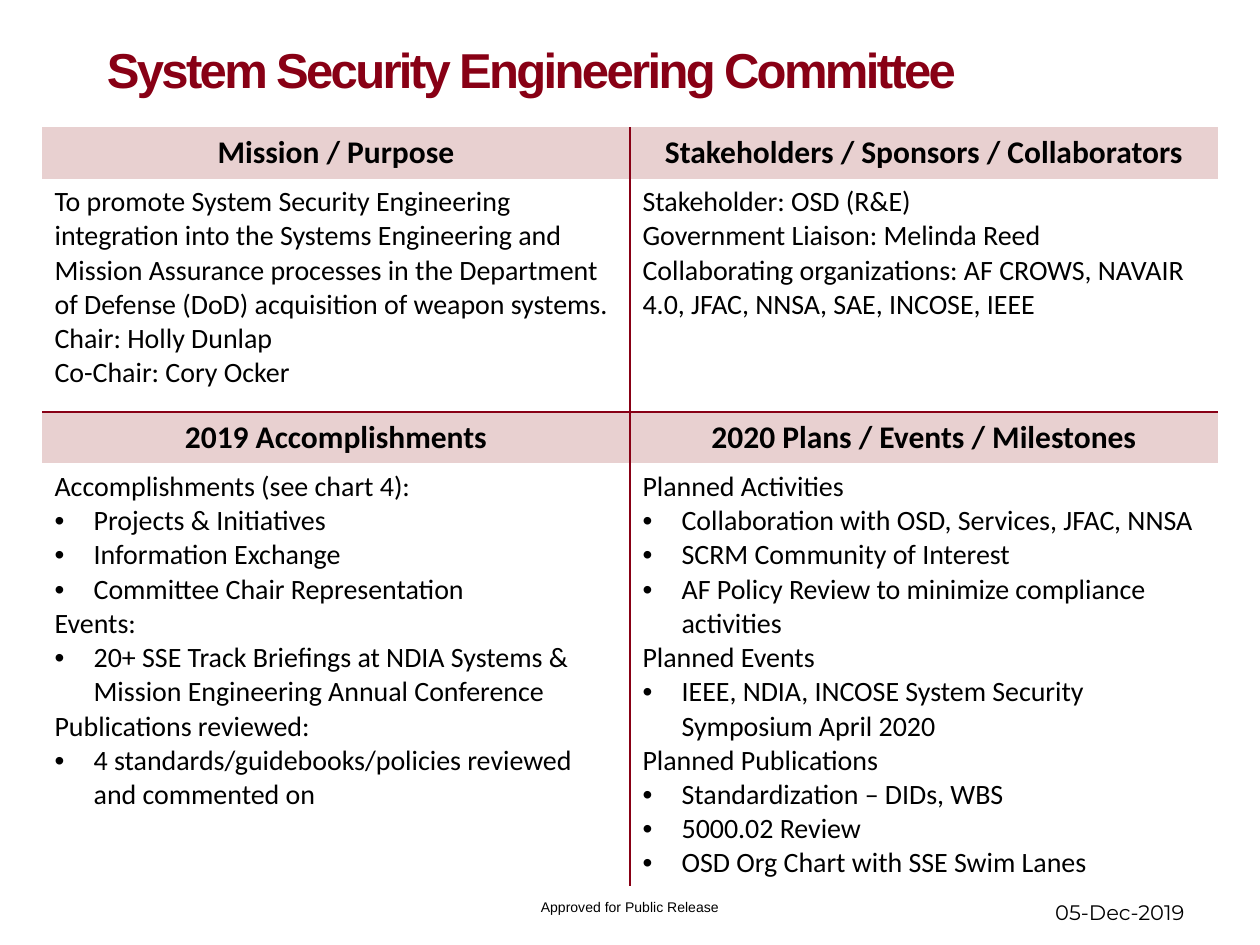
from dataclasses import dataclass

import pptx
import pptx.dml.color
import pptx.enum.text
import pptx.oxml
import pptx.oxml.ns
import pptx.util

WIDE, HIGH = 10, 7.5
MAROON, ROSE, BLACK = "880015", "E8D0D0", "000000"
LEFT = pptx.enum.text.PP_ALIGN.LEFT
CENTER = pptx.enum.text.PP_ALIGN.CENTER
RIGHT = pptx.enum.text.PP_ALIGN.RIGHT
TOP = pptx.enum.text.MSO_ANCHOR.TOP
MIDDLE = pptx.enum.text.MSO_ANCHOR.MIDDLE
ROW_HEIGHTS = (0.41, 1.85, 0.41, 3.35)
HANGING = 0.31
BULLET = "• "


@dataclass(frozen=True)
class Area:
    left: float
    top: float
    width: float
    height: float

    def emu(self) -> list[int]:
        shares = (self.left * WIDE, self.top * HIGH, self.width * WIDE, self.height * HIGH)
        return [pptx.util.Inches(share) for share in shares]


@dataclass(frozen=True)
class Quadrant:
    column: int
    row: int
    heading: str
    lines: tuple[str, ...]


QUADRANTS = (
    Quadrant(0, 0, "Mission / Purpose", (
        "To promote System Security Engineering integration into the Systems Engineering and "
        "Mission Assurance processes in the Department of Defense (DoD) acquisition of weapon systems.",
        "Chair: Holly Dunlap",
        "Co-Chair: Cory Ocker",
    )),
    Quadrant(1, 0, "Stakeholders / Sponsors / Collaborators", (
        "Stakeholder: OSD (R&E)",
        "Government Liaison: Melinda Reed",
        "Collaborating organizations: AF CROWS, NAVAIR 4.0, JFAC, NNSA, SAE, INCOSE, IEEE",
    )),
    Quadrant(0, 2, "2019 Accomplishments", (
        "Accomplishments (see chart 4):",
        "• Projects & Initiatives",
        "• Information Exchange",
        "• Committee Chair Representation",
        "Events:",
        "• 20+ SSE Track Briefings at NDIA Systems & Mission Engineering Annual Conference",
        "Publications reviewed:",
        "• 4 standards/guidebooks/policies reviewed and commented on",
    )),
    Quadrant(1, 2, "2020 Plans / Events / Milestones", (
        "Planned Activities",
        "• Collaboration with OSD, Services, JFAC, NNSA",
        "• SCRM Community of Interest",
        "• AF Policy Review to minimize compliance activities",
        "Planned Events",
        "• IEEE, NDIA, INCOSE System Security Symposium April 2020",
        "Planned Publications",
        "• Standardization – DIDs, WBS",
        "• 5000.02 Review",
        "• OSD Org Chart with SSE Swim Lanes",
    )),
)


def colour(value: str) -> pptx.dml.color.RGBColor:
    return pptx.dml.color.RGBColor.from_string(value)


def element(markup: str):
    tag, _, rest = markup.partition(" ")
    return pptx.oxml.parse_xml(f"<a:{tag} {pptx.oxml.ns.nsdecls('a')} {rest}")


def write(para, text: str, *, size: float, font: str = "Calibri", ink: str = BLACK,
          bold: bool = False, align=LEFT, spacing: float = 0) -> None:
    para.alignment = align
    if text.startswith(BULLET):
        properties = para._p.get_or_add_pPr()
        indent = pptx.util.Inches(HANGING)
        properties.set("marL", str(indent))
        properties.set("indent", str(-indent))
        properties.append(element('buFont typeface="Arial"/>'))
        properties.append(element('buChar char="•"/>'))
    span = para.add_run()
    span.text = text.removeprefix(BULLET)
    span.font.name = font
    span.font.size = pptx.util.Pt(size)
    span.font.bold = bold
    span.font.color.rgb = colour(ink)
    if spacing:
        span._r.get_or_add_rPr().set("spc", str(round(spacing * 100)))


def add_text(page, area: Area, text: str, anchor=MIDDLE, **style) -> None:
    frame = page.shapes.add_textbox(*area.emu()).text_frame
    frame.word_wrap = True
    frame.vertical_anchor = anchor
    write(frame.paragraphs[0], text, **style)


def set_borders(cell, ruled: str) -> None:
    properties = cell._tc.get_or_add_tcPr()
    for place, side in enumerate("LRTB"):
        if side in ruled:
            markup = (f'ln{side} w="{pptx.util.Pt(1.5)}"><a:solidFill>'
                      f'<a:srgbClr val="{MAROON}"/></a:solidFill></a:ln{side}>')
        else:
            markup = f'ln{side} w="0"><a:noFill/></a:ln{side}>'
        properties.insert(place, element(markup))


def fill_cell(cell, lines: tuple[str, ...], ruled: str, heading: bool) -> None:
    if heading:
        cell.fill.solid()
        cell.fill.fore_color.rgb = colour(ROSE)
    else:
        cell.fill.background()
    set_borders(cell, ruled)
    frame = cell.text_frame
    for index, line in enumerate(lines):
        para = frame.add_paragraph() if index else frame.paragraphs[0]
        write(para, line, size=18 if heading else 16, bold=heading,
              align=CENTER if heading else LEFT)


def add_quadrants(page, area: Area) -> None:
    table = page.shapes.add_table(len(ROW_HEIGHTS), 2, *area.emu()).table
    table.first_row = False
    table.horz_banding = False
    for row, height in zip(table.rows, ROW_HEIGHTS):
        row.height = pptx.util.Inches(height)
    for quadrant in QUADRANTS:
        side = "RL"[quadrant.column]
        upper = quadrant.row == 0
        fill_cell(table.cell(quadrant.row, quadrant.column), (quadrant.heading,),
                  side if upper else side + "T", heading=True)
        fill_cell(table.cell(quadrant.row + 1, quadrant.column), quadrant.lines,
                  side + "B" if upper else side, heading=False)


def main() -> None:
    deck = pptx.Presentation()
    deck.slide_width = pptx.util.Inches(WIDE)
    deck.slide_height = pptx.util.Inches(HIGH)
    page = deck.slides.add_slide(deck.slide_layouts[6])
    add_text(page, Area(0.075, 0.025, 0.742, 0.097), "System Security Engineering Committee",
             size=28, font="Arial", ink=MAROON, bold=True, spacing=-1.5)
    add_quadrants(page, Area(1 / 30, 0.1345, 28 / 30, sum(ROW_HEIGHTS) / HIGH))
    add_text(page, Area(0.717, 0.944, 0.233, 0.043), "05-Dec-2019",
             size=12, font="Montserrat", align=RIGHT)
    add_text(page, Area(0, 0.944, 1, 0.047), "Approved for Public Release",
             anchor=TOP, size=8, font="Arial", align=CENTER)
    deck.save("out.pptx")


if __name__ == "__main__":
    main()
